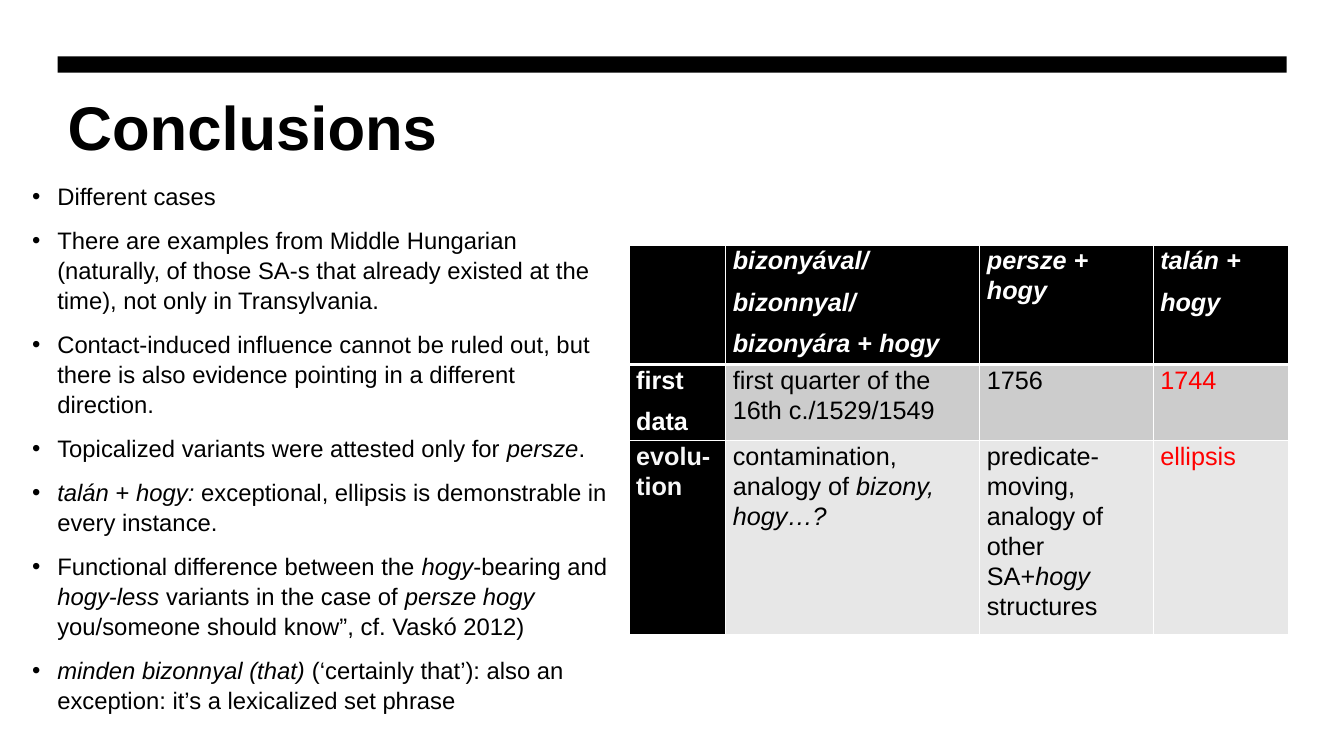
from dataclasses import dataclass

from lxml.etree import SubElement
from pptx import Presentation
from pptx.dml.color import RGBColor
from pptx.enum.shapes import MSO_SHAPE
from pptx.enum.text import MSO_ANCHOR, MSO_AUTO_SIZE, PP_ALIGN
from pptx.oxml import parse_xml
from pptx.oxml.ns import nsdecls, qn
from pptx.util import Emu, Inches, Pt

SLIDE_WIDTH, SLIDE_HEIGHT = Inches(13.33), Inches(7.5)


@dataclass(frozen=True)
class Theme:
    font: str = "Arial"
    black: str = "000000"
    white: str = "FFFFFF"
    label: str = "F7F7F7"
    red: str = "FF0000"
    dark_band: str = "CCCCCC"
    light_band: str = "E7E7E7"
    title_size: float = 44
    body_size: float = 17
    table_size: float = 18


@dataclass(frozen=True)
class Area:
    """Left, top, width and height in percent of the slide."""
    left: float
    top: float
    width: float
    height: float

    def box(self) -> tuple[Emu, Emu, Emu, Emu]:
        return across(self.left), down(self.top), across(self.width), down(self.height)


@dataclass(frozen=True)
class Entry:
    """A table cell; each line is a paragraph and *asterisks* mark italics."""
    lines: tuple[str, ...]
    fill: str
    color: str = "000000"
    bold: bool = False


THEME = Theme()
BAR = Area(4.28, 7.47, 91.45, 2.13)
TITLE = Area(4.28, 11.07, 91.45, 21.33)
FINDINGS = Area(1.65, 23.2, 45.16, 76.8)
COLUMN_SHARES = (7.2, 18.9, 12.9, 10.05)
ROW_SHARES = (15.07, 9.47, 23.8)
OVERVIEW = Area(46.81, 32.4, sum(COLUMN_SHARES), sum(ROW_SHARES))

FINDING_LINES = (
    "Different cases",
    "There are examples from Middle Hungarian (naturally, of those SA-s that "
    "already existed at the time), not only in Transylvania.",
    "Contact-induced influence cannot be ruled out, but there is also evidence "
    "pointing in a different direction.",
    "Topicalized variants were attested only for *persze*.",
    "*talán *+ *hogy:* exceptional, ellipsis is demonstrable in every instance.",
    "Functional difference between the *hogy*-bearing and *hogy-less *variants in "
    "the case of *persze hogy *you/someone should know”, cf. Vaskó 2012)",
    "*minden bizonnyal (that) *(‘certainly that’): also an exception: "
    "it’s a lexicalized set phrase",
)


def header(*lines: str, color: str = THEME.white) -> Entry:
    return Entry(lines, THEME.black, color, True)


ENTRIES = (
    (header(),
     header("*bizonyával/*", "*bizonnyal/*", "*bizonyára *+ *hogy*"),
     header("*persze + hogy*"),
     header("*talán +*", "*hogy*")),
    (header("first", "data"),
     Entry(("first quarter of the 16th c./1529/1549",), THEME.dark_band),
     Entry(("1756",), THEME.dark_band),
     Entry(("1744",), THEME.dark_band, THEME.red)),
    (header("evolu-tion", color=THEME.label),
     Entry(("contamination, analogy of *bizony, hogy…?*",), THEME.light_band),
     Entry(("predicate-moving, analogy of other SA+*hogy *structures",), THEME.light_band),
     Entry(("ellipsis",), THEME.light_band, THEME.red)),
)


def across(share: float) -> Emu:
    return Emu(round(SLIDE_WIDTH * share / 100))


def down(share: float) -> Emu:
    return Emu(round(SLIDE_HEIGHT * share / 100))


def write(frame, lines: tuple[str, ...], *, size: float, color: str = THEME.black,
          bold: bool = False, spacing: float = 1.0, before: float = 0,
          after: float = 0, bullet: bool = False) -> None:
    """Fill a text frame, one paragraph per line."""
    for number, line in enumerate(lines):
        paragraph = frame.add_paragraph() if number else frame.paragraphs[0]
        paragraph.alignment = PP_ALIGN.LEFT
        paragraph.line_spacing = spacing
        paragraph.space_before, paragraph.space_after = Pt(before), Pt(after)
        for part, words in enumerate(line.split("*")):
            if not words:
                continue
            run = paragraph.add_run()
            run.text = words
            font = run.font
            font.name, font.size, font.bold = THEME.font, Pt(size), bold
            font.italic = part % 2 == 1
            font.color.rgb = RGBColor.from_string(color)
        if bullet:
            properties = paragraph._p.get_or_add_pPr()
            properties.set("marL", str(Inches(0.25)))
            properties.set("indent", str(-Inches(0.25)))
            SubElement(properties, qn("a:buFont"), typeface=THEME.font)
            SubElement(properties, qn("a:buChar"), char="•")


def draw_bar(slide) -> None:
    bar = slide.shapes.add_shape(MSO_SHAPE.RECTANGLE, *BAR.box())
    bar.shadow.inherit = False
    bar.fill.solid()
    bar.fill.fore_color.rgb = RGBColor.from_string(THEME.black)
    bar.line.fill.background()


def draw_title(slide) -> None:
    title = slide.shapes.title
    title.left, title.top, title.width, title.height = TITLE.box()
    title.text_frame.vertical_anchor = MSO_ANCHOR.TOP
    title.text_frame.auto_size = MSO_AUTO_SIZE.NONE
    write(title.text_frame, ("Conclusions",), size=THEME.title_size, bold=True)


def draw_findings(slide) -> None:
    findings = slide.shapes.add_textbox(*FINDINGS.box()).text_frame
    findings.word_wrap = True
    write(findings, FINDING_LINES, size=THEME.body_size, spacing=1.05,
          before=10, bullet=True)


def draw_borders(cell, bottom: float) -> None:
    properties = cell._tc.get_or_add_tcPr()
    for place, (side, points) in enumerate(zip("LRTB", (1, 1, 1, bottom))):
        properties.insert(place, parse_xml(
            f'<a:ln{side} {nsdecls("a")} w="{Pt(points)}"><a:solidFill>'
            f'<a:srgbClr val="{THEME.white}"/></a:solidFill></a:ln{side}>'))


def draw_overview(slide) -> None:
    table = slide.shapes.add_table(
        len(ROW_SHARES), len(COLUMN_SHARES), *OVERVIEW.box()).table
    for column, share in zip(table.columns, COLUMN_SHARES):
        column.width = across(share)
    for row, share in zip(table.rows, ROW_SHARES):
        row.height = down(share)
    for row_number, entries in enumerate(ENTRIES):
        for column_number, entry in enumerate(entries):
            cell = table.cell(row_number, column_number)
            cell.margin_left = cell.margin_right = Inches(0.07)
            cell.margin_top = cell.margin_bottom = 0
            cell.fill.solid()
            cell.fill.fore_color.rgb = RGBColor.from_string(entry.fill)
            draw_borders(cell, bottom=1 if row_number else 3)
            write(cell.text_frame, entry.lines, size=THEME.table_size,
                  color=entry.color, bold=entry.bold, spacing=1.07, after=8)


def main() -> None:
    deck = Presentation()
    deck.slide_width, deck.slide_height = SLIDE_WIDTH, SLIDE_HEIGHT
    slide = deck.slides.add_slide(deck.slide_layouts.get_by_name("Title Only"))
    # Heading
    draw_bar(slide)
    draw_title(slide)
    # Findings on the left, overview table on the right
    draw_findings(slide)
    draw_overview(slide)
    deck.save("out.pptx")


if __name__ == "__main__":
    main()
